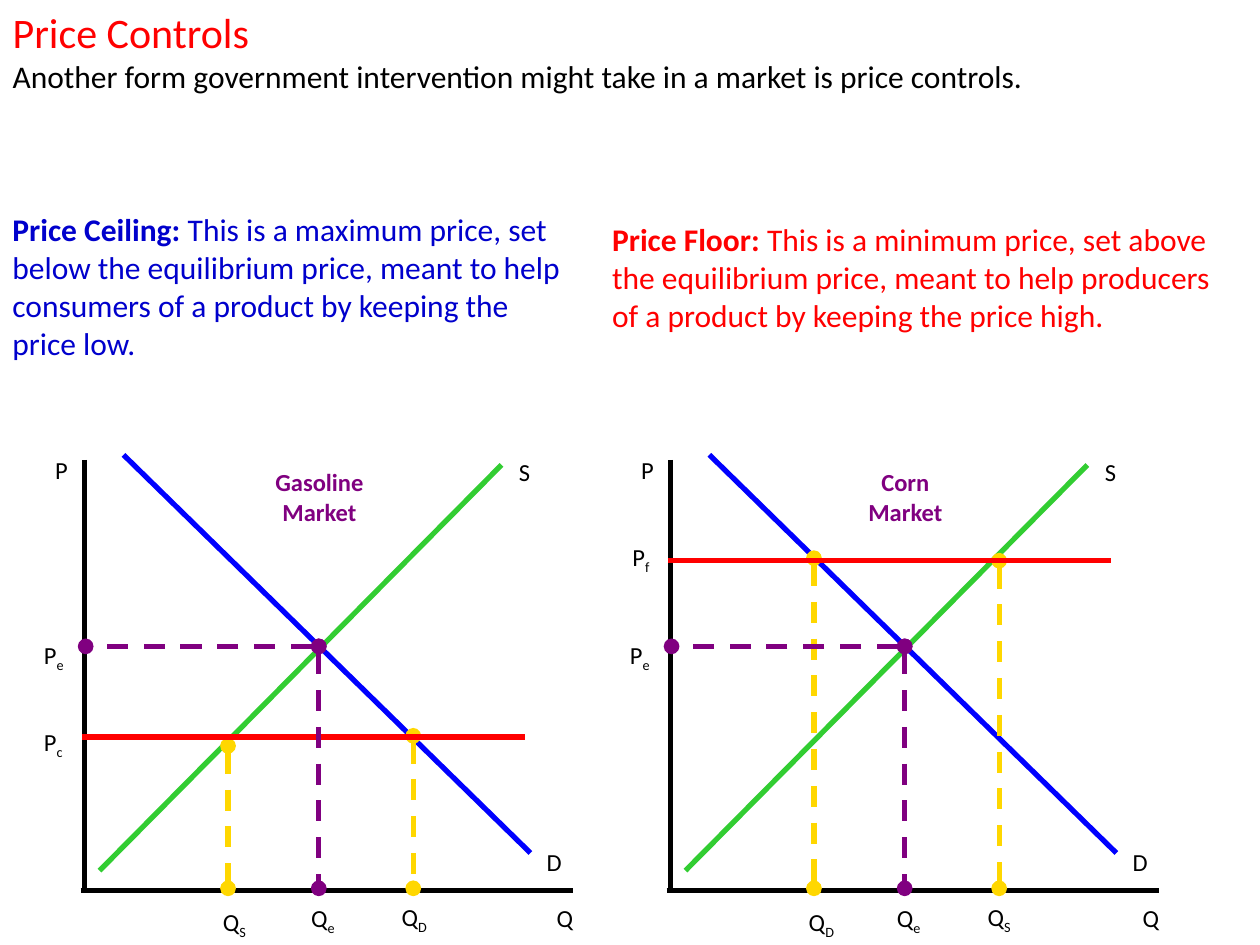
"""Build a slide comparing a price ceiling with a price floor."""
from dataclasses import dataclass

from lxml import etree
from pptx import Presentation
from pptx.dml.color import RGBColor
from pptx.enum.dml import MSO_LINE
from pptx.enum.shapes import MSO_CONNECTOR
from pptx.enum.text import MSO_ANCHOR, MSO_AUTO_SIZE, PP_ALIGN
from pptx.oxml.ns import qn
from pptx.util import Inches, Pt

STRAIGHT = MSO_CONNECTOR.STRAIGHT
DASH = MSO_LINE.DASH
TOP = MSO_ANCHOR.TOP
NO_FIT = MSO_AUTO_SIZE.NONE
LEFT, CENTER = PP_ALIGN.LEFT, PP_ALIGN.CENTER

COLUMNS, ROWS = 100, 75
CELL = Inches(0.1)
TITLE_LAYOUT = 5
FONT = "Calibri"
BLACK, RED, NAVY = "000000", "FF0000", "0000CC"
BLUE, GREEN, GOLD, PURPLE = "0000FF", "32CD32", "FFD700", "800080"
LABEL_HEIGHT = 3.4
AXIS_ROW, DROP_ROW = 70.7, 70.5
EQUILIBRIUM = (25.3, 51.3)
LOW_COLUMN, HIGH_COLUMN = 18.1, 32.8


@dataclass(frozen=True)
class Label:
    """A graph label with an optional subscript."""
    text: str
    subscript: str
    column: float
    row: float
    width: float


@dataclass(frozen=True)
class Segment:
    """A straight graph line between two grid points."""
    start: tuple[float, float]
    end: tuple[float, float]
    color: str
    dotted: bool = False


@dataclass(frozen=True)
class Market:
    """A supply and demand graph with one controlled price."""
    name: str
    column: float
    control_row: float
    control_label: Label
    low_top: float
    high_top: float
    low_subscript: str
    high_subscript: str


MARKETS = (
    Market("Gasoline Market", 0, 58.5, Label("P", "c", 2.5, 57.2, 5.5),
           59.2, 58.4, "S", "D"),
    Market("Corn Market", 46.5, 44.5, Label("P", "f", 2.7, 42.5, 5.5),
           44.3, 44.5, "D", "S"),
)
CURVES = (
    Segment((6.7, 36.5), (6.7, AXIS_ROW), BLACK),
    Segment((6.4, AXIS_ROW), (45.5, AXIS_ROW), BLACK),
    Segment((9.8, 36.1), (42.1, 67.7), BLUE),
    Segment((7.9, 69.1), (39.8, 36.9), GREEN),
)
EQUILIBRIUM_LINES = (
    Segment(EQUILIBRIUM, (6.8, EQUILIBRIUM[1]), PURPLE, True),
    Segment(EQUILIBRIUM, (EQUILIBRIUM[0], DROP_ROW), PURPLE, True),
)
COMMON_LABELS = (
    Label("P", "", 3.4, 35.6, 4.3),
    Label("S", "", 40.2, 35.8, 4.3),
    Label("P", "e", 2.5, 50.3, 5.5),
    Label("Q", "e", 23.7, 71.2, 5.8),
    Label("D", "", 42.4, 66.7, 4.8),
    Label("Q", "", 43.2, 71.2, 4.8),
)


def cells(count: float) -> int:
    """Convert grid cells to a slide length."""
    return round(count * CELL)


def add_span(para, text: str, *, size: float = 14, color: str = BLACK,
             bold: bool = False, subscript: bool = False) -> None:
    """Append formatted text to a paragraph."""
    span = para.add_run()
    span.text = text
    span.font.name = FONT
    span.font.size = Pt(size)
    span.font.bold = bold
    span.font.color.rgb = RGBColor.from_string(color)
    if subscript:
        span.font._element.set("baseline", "-25000")


def add_box(page, column: float, row: float, width: float, height: float):
    """Add a wrapping text box and return its first paragraph."""
    box = page.shapes.add_textbox(*map(cells, (column, row, width, height)))
    box.text_frame.word_wrap = True
    return box.text_frame.paragraphs[0]


def add_label(page, label: Label, offset: float) -> None:
    """Draw a label shifted to its graph."""
    para = add_box(page, label.column + offset, label.row, label.width, LABEL_HEIGHT)
    add_span(para, label.text)
    if label.subscript:
        add_span(para, label.subscript, subscript=True)


def add_segment(page, segment: Segment, offset: float) -> None:
    """Draw a line, with dashes and oval ends when dotted."""
    (left, top), (right, bottom) = segment.start, segment.end
    points = (left + offset, top, right + offset, bottom)
    connector = page.shapes.add_connector(STRAIGHT, *map(cells, points))
    connector.line.color.rgb = RGBColor.from_string(segment.color)
    connector.line.width = Pt(3)
    properties = connector._element.spPr
    if segment.dotted:
        connector.line.dash_style = DASH
        outline = properties.find(qn("a:ln"))
        for end in ("a:headEnd", "a:tailEnd"):
            etree.SubElement(outline, qn(end)).set("type", "oval")
    etree.SubElement(properties, qn("a:effectLst"))


def add_market(page, market: Market) -> None:
    """Draw one complete market graph."""
    control = Segment((6.5, market.control_row), (41.7, market.control_row), RED)
    drops = tuple(
        Segment((column, top), (column, DROP_ROW), GOLD, True)
        for column, top in ((HIGH_COLUMN, market.high_top), (LOW_COLUMN, market.low_top))
    )
    for segment in (*CURVES, *drops, control, *EQUILIBRIUM_LINES):
        add_segment(page, segment, market.column)
    quantities = (
        Label("Q", market.low_subscript, 16.7, 71.5, 5.8),
        Label("Q", market.high_subscript, 30.9, 71.1, 6),
    )
    for label in (*COMMON_LABELS, market.control_label, *quantities):
        add_label(page, label, market.column)
    para = add_box(page, 19.9 + market.column, 36.6, 10.9, 5.7)
    para.alignment = CENTER
    add_span(para, market.name, color=PURPLE, bold=True)


def add_definition(page, place: tuple, term: str, meaning: str, color: str) -> None:
    """Write a bold term followed by its meaning."""
    para = add_box(page, *place)
    add_span(para, term, size=18, color=color, bold=True)
    add_span(para, meaning, size=18, color=color)


def add_heading(page) -> None:
    """Place the title and its introduction in the title placeholder."""
    title = page.shapes.title
    title.left, title.top, title.width, title.height = map(cells, (0, 0, COLUMNS, 8.1))
    frame = title.text_frame
    frame.word_wrap = True
    frame.auto_size = NO_FIT
    frame.vertical_anchor = TOP
    heading, introduction = frame.paragraphs[0], frame.add_paragraph()
    heading.alignment = introduction.alignment = LEFT
    add_span(heading, "Price Controls", size=24, color=RED)
    add_span(introduction, "Another form government intervention might take in a "
             "market is price controls.", size=18)


def main() -> None:
    """Create and save the deck."""
    deck = Presentation()
    deck.slide_width, deck.slide_height = cells(COLUMNS), cells(ROWS)
    page = deck.slides.add_slide(deck.slide_layouts[TITLE_LAYOUT])
    add_heading(page)
    add_definition(page, (0, 16.2, 46.8, 13.1), "Price Ceiling: ",
                   "This is a maximum price, set below the equilibrium price, meant "
                   "to help consumers of a product by keeping the price low.", NAVY)
    for market in MARKETS:
        add_market(page, market)
    add_definition(page, (47.6, 17, 50, 10.1), "Price Floor: ",
                   "This is a minimum price, set above the equilibrium price, meant "
                   "to help producers of a product by keeping the price high.", RED)
    deck.save("out.pptx")


if __name__ == "__main__":
    main()
